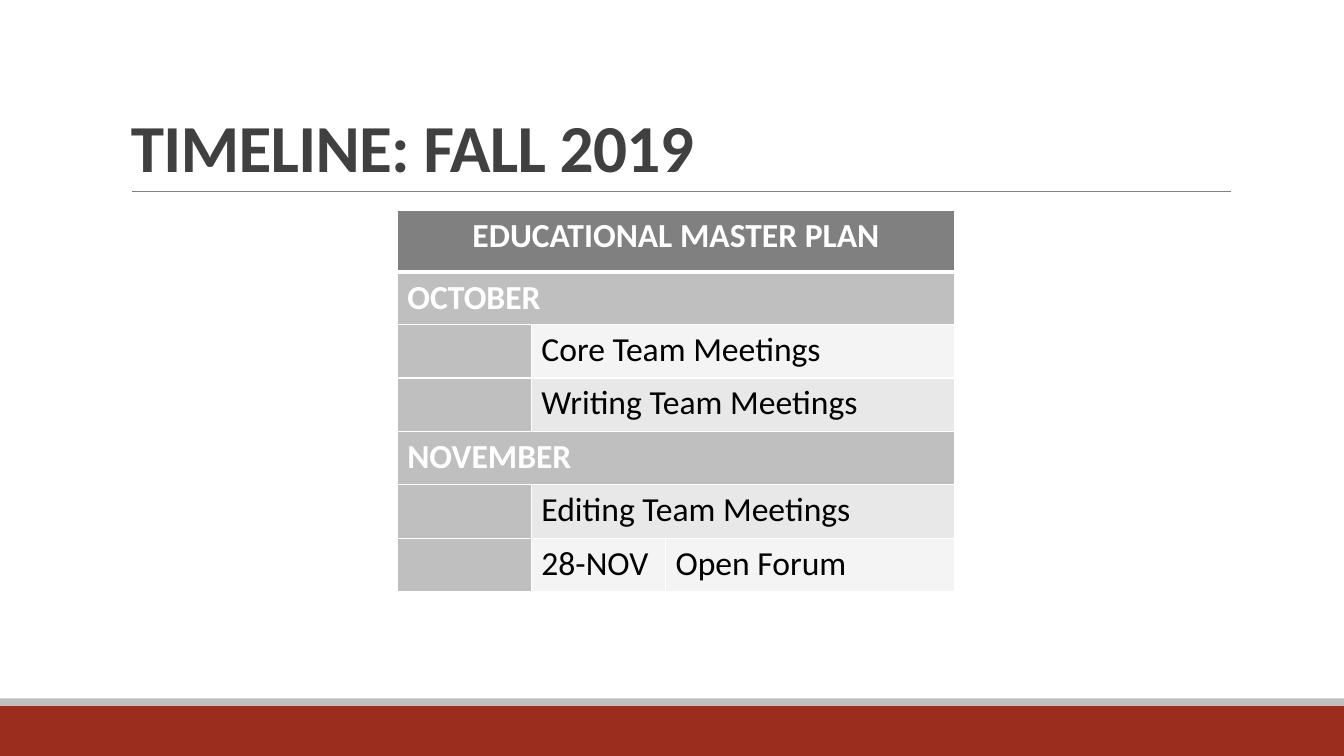
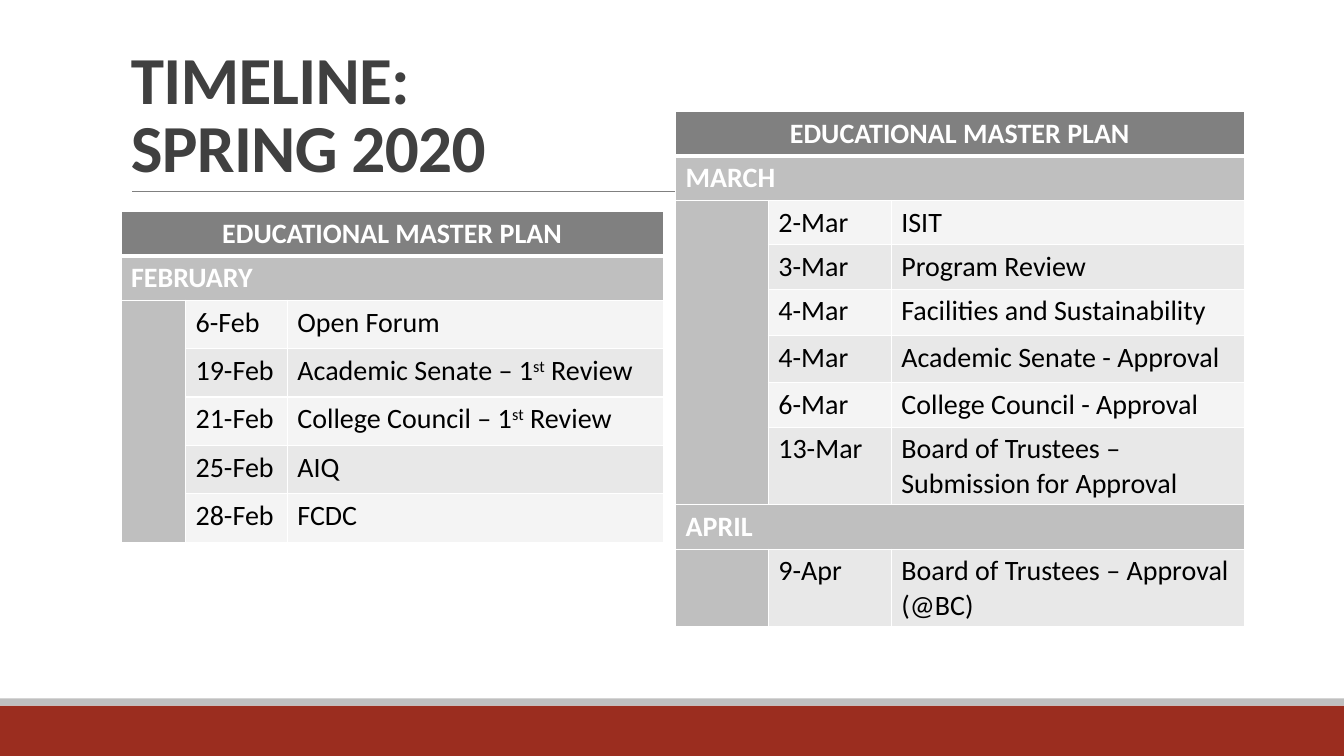
from lxml.etree import SubElement
from pptx import Presentation
from pptx.dml.color import RGBColor
from pptx.enum.shapes import MSO_CONNECTOR, MSO_SHAPE
from pptx.enum.text import MSO_ANCHOR, PP_ALIGN
from pptx.oxml.ns import qn
from pptx.util import Inches, Pt

FONT = "Calibri"
RED, SILVER, GRAY, CHARCOAL = "9B2D1F", "BFBFBF", "808080", "404040"
WHITE, BLACK = "FFFFFF", "000000"
STRIPES = ("F4F4F4", "E8E8E8")
BANDS = [(7, 0.5, RED), (6.93, 0.07, SILVER)]
PLAN = "EDUCATIONAL MASTER PLAN"

# Entries: (month,) or (date, event); no date lets the event span both columns.
# Text between carets is superscript.
FALL = dict(
    left=3.94, top=2.09, size=24, join_gutter=False,
    columns=[1.33, 1.33, 2.87],
    heights=[0.61, 0.52, 0.53, 0.53, 0.53, 0.53, 0.53],
    entries=[
        ("OCTOBER",),
        (None, "Core Team Meetings"),
        (None, "Writing Team Meetings"),
        ("NOVEMBER",),
        (None, "Editing Team Meetings"),
        ("28-NOV", "Open Forum"),
    ])
FEBRUARY = dict(
    left=1.2, top=2.1, size=20, join_gutter=True,
    columns=[0.64, 1.01, 3.73],
    heights=[0.44, 0.44, 0.48, 0.48, 0.48, 0.48, 0.48],
    entries=[
        ("FEBRUARY",),
        ("6-Feb", "Open Forum"),
        ("19-Feb", "Academic Senate – 1^st^ Review"),
        ("21-Feb", "College Council – 1^st^ Review"),
        ("25-Feb", "AIQ"),
        ("28-Feb", "FCDC"),
    ])
MARCH_APRIL = dict(
    left=6.7, top=1.11, size=20, join_gutter=True,
    columns=[0.92, 1.22, 3.5],
    heights=[0.44, 0.44, 0.44, 0.44, 0.46, 0.47, 0.44, 0.77, 0.44, 0.77],
    entries=[
        ("MARCH",),
        ("2-Mar", "ISIT"),
        ("3-Mar", "Program Review"),
        ("4-Mar", "Facilities and Sustainability"),
        ("4-Mar", "Academic Senate - Approval"),
        ("6-Mar", "College Council - Approval"),
        ("13-Mar", "Board of Trustees – Submission for Approval"),
        ("APRIL",),
        ("9-Apr", "Board of Trustees – Approval (@BC)"),
    ])
SLIDES = [
    ("TIMELINE: FALL 2019", [FALL]),
    ("TIMELINE:\vSPRING 2020", [FEBRUARY, MARCH_APRIL]),
]


def rgb(value):
    return RGBColor.from_string(value)


def write(paragraph, text, size, color, bold):
    """Fill a paragraph, raising the parts between carets."""
    for index, part in enumerate(text.split("^")):
        run = paragraph.add_run()
        run.text = part
        if index % 2:
            run.font._element.set("baseline", "30000")
    font = paragraph.font
    font.name, font.size, font.bold = FONT, Pt(size), bold
    font.color.rgb = rgb(color)


prs = Presentation()
prs.slide_width, prs.slide_height = Inches(13.33), Inches(7.5)

for title, schedules in SLIDES:
    slide = prs.slides.add_slide(prs.slide_layouts[6])

    for top, height, color in BANDS:
        band = slide.shapes.add_shape(
            MSO_SHAPE.RECTANGLE, 0, Inches(top), prs.slide_width, Inches(height))
        band.shadow.inherit = False
        band.fill.solid()
        band.fill.fore_color.rgb = rgb(color)
        band.line.fill.background()

    rule = slide.shapes.add_connector(
        MSO_CONNECTOR.STRAIGHT, Inches(1.31), Inches(1.9), Inches(12.21), Inches(1.9))
    rule.line.color.rgb = rgb(GRAY)
    rule.line.width = Pt(0.5)
    SubElement(rule._element.spPr, qn("a:effectLst"))

    heading = slide.shapes.add_textbox(
        Inches(1.2), Inches(0.31), Inches(11), Inches(1.59)).text_frame
    heading.word_wrap = True
    heading.vertical_anchor = MSO_ANCHOR.BOTTOM
    paragraph = heading.paragraphs[0]
    paragraph.line_spacing = 0.85
    for index, line in enumerate(title.split("\v")):
        if index:
            paragraph.add_line_break()
        run = paragraph.add_run()
        run.text = line
        run.font._element.set("spc", "-50")
    write(paragraph, "", 48, CHARCOAL, True)

    for schedule in schedules:
        columns, heights = schedule["columns"], schedule["heights"]
        size, entries = schedule["size"], schedule["entries"]
        table = slide.shapes.add_table(
            len(heights), len(columns), Inches(schedule["left"]), Inches(schedule["top"]),
            Inches(sum(columns)), Inches(sum(heights))).table
        table.first_row = table.horz_banding = False
        for column, width in zip(table.columns, columns):
            column.width = Inches(width)
        for row, height in zip(table.rows, heights):
            row.height = Inches(height)

        for r, entry in enumerate([(PLAN,)] + entries):
            is_banner = len(entry) == 1
            for c in range(3):
                cell = table.cell(r, c)
                for side in ("lnL", "lnR", "lnT", "lnB"):
                    thick = (r, side) in ((0, "lnB"), (1, "lnT"))
                    border = SubElement(cell._tc.get_or_add_tcPr(), qn(f"a:{side}"),
                                        w=str(Pt(3 if thick else 1)))
                    SubElement(SubElement(border, qn("a:solidFill")),
                               qn("a:srgbClr"), val=WHITE)
                cell.fill.solid()
                if r == 0:
                    color = GRAY
                elif is_banner or c == 0:
                    color = SILVER
                else:
                    color = STRIPES[r % 2]
                cell.fill.fore_color.rgb = rgb(color)
                # Empty cells get the table's size so that rows keep their height.
                cell.text_frame.paragraphs[0].font.size = Pt(size)

            if is_banner:
                table.cell(r, 0).merge(table.cell(r, 2))
                banner = table.cell(r, 0).text_frame.paragraphs[0]
                write(banner, entry[0], size, WHITE, True)
                if r == 0:
                    banner.alignment = PP_ALIGN.CENTER
                continue
            date, event = entry
            if date:
                write(table.cell(r, 1).text_frame.paragraphs[0], date, size, BLACK, False)
            else:
                table.cell(r, 1).merge(table.cell(r, 2))
            write(table.cell(r, 2 if date else 1).text_frame.paragraphs[0],
                  event, size, BLACK, False)

        if schedule["join_gutter"]:
            months = [r for r, entry in enumerate(entries, 1) if len(entry) == 1]
            for month, following in zip(months, months[1:] + [len(heights)]):
                if following - month > 2:
                    table.cell(month + 1, 0).merge(table.cell(following - 1, 0))

prs.save("out.pptx")
